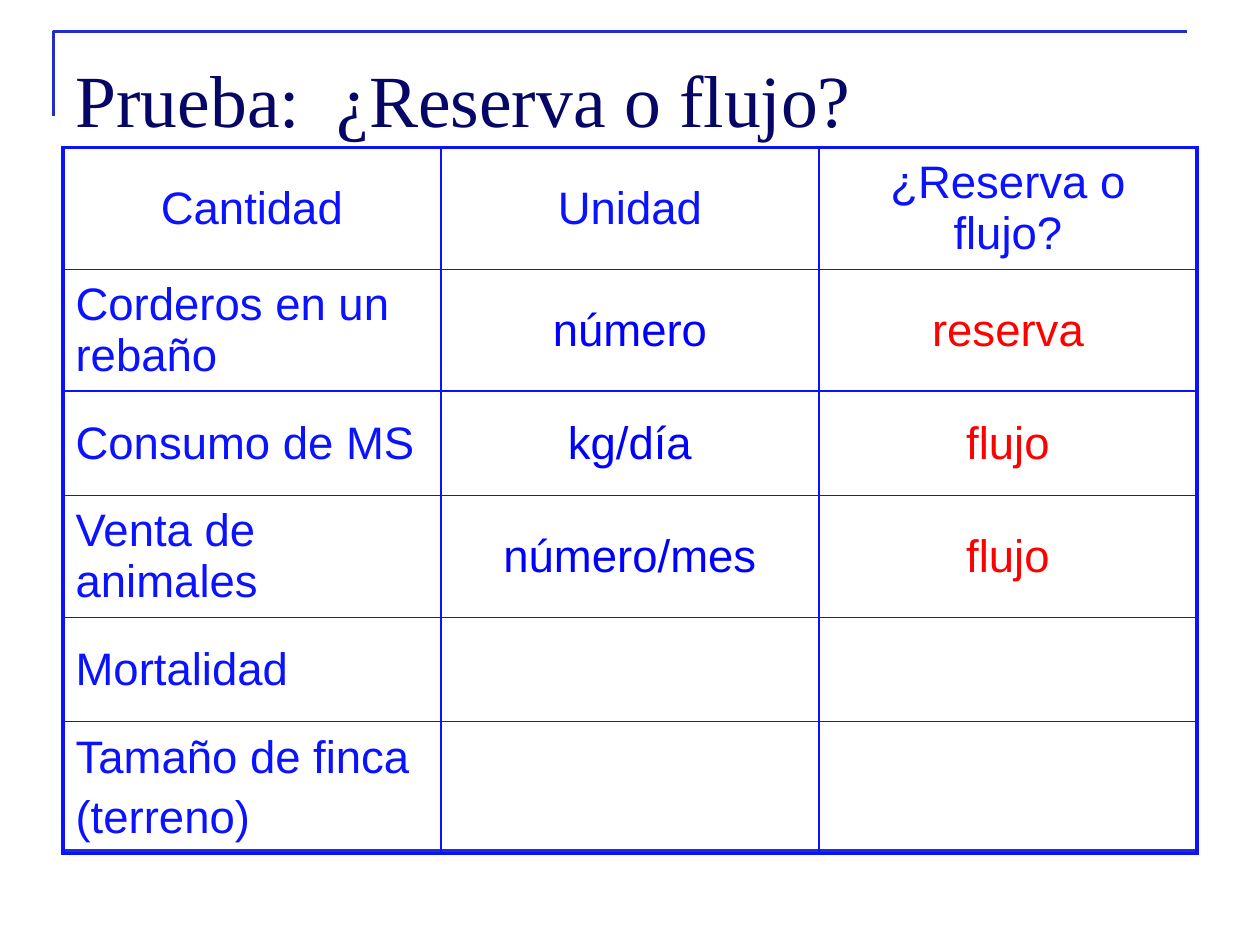
from lxml.etree import SubElement
from pptx import Presentation
from pptx.dml.color import RGBColor
from pptx.enum.shapes import MSO_CONNECTOR
from pptx.enum.text import MSO_ANCHOR, MSO_AUTO_SIZE, PP_ALIGN
from pptx.oxml.ns import qn
from pptx.util import Pt

TITLE = "Prueba:  ¿Reserva o flujo?"
ROWS = [
    ("Cantidad", "Unidad", "¿Reserva o flujo?"),
    ("Corderos en un rebaño", "número", "reserva"),
    ("Consumo de MS", "kg/día", "flujo"),
    ("Venta de animales", "número/mes", "flujo"),
    ("Mortalidad", "", ""),
    ("Tamaño de finca\n(terreno)", "", ""),
]
HEIGHTS = [69.7, 69.7, 59.5, 69.7, 59.5, 75.5]
COL_W = 216
LEFT, TOP = 36, 84.2
THICK, THIN = 2.25, 1

NAVY = RGBColor(0x06, 0x06, 0x66)
RULE = RGBColor(0x20, 0x2E, 0xCC)
BLUE = RGBColor(0x0A, 0x12, 0xFF)
UNIT_BLUE = RGBColor(0x00, 0x00, 0xFF)
RED = RGBColor(0xFF, 0x00, 0x00)
BODY_COLORS = [BLUE, UNIT_BLUE, RED]


def style_line(shape):
    shape.line.color.rgb = RULE
    shape.line.width = Pt(1.5)


def set_border(cell, side, width):
    ln = SubElement(cell._tc.get_or_add_tcPr(), qn(f"a:ln{side}"), w=str(Pt(width)))
    fill = SubElement(ln, qn("a:solidFill"))
    SubElement(fill, qn("a:srgbClr"), val=str(BLUE))


def fill_cell(cell, text, row, col):
    edges = {"L": col == 0, "R": col == len(ROWS[0]) - 1,
             "T": row == 0, "B": row == len(ROWS) - 1}
    for side, outer in edges.items():
        set_border(cell, side, THICK if outer else THIN)
    cell.fill.background()
    cell.vertical_anchor = MSO_ANCHOR.MIDDLE
    cell.text_frame.text = text
    for p in cell.text_frame.paragraphs:
        p.alignment = PP_ALIGN.LEFT if row and col == 0 else PP_ALIGN.CENTER
        p.space_before = Pt(5.2)
        for r in p.runs:
            r.font.name = "Arial"
            r.font.size = Pt(26)
            r.font.color.rgb = BODY_COLORS[col] if row else BLUE


prs = Presentation()
prs.slide_width, prs.slide_height = Pt(720), Pt(540)
s = prs.slides.add_slide(prs.slide_layouts[5])

fb = s.shapes.build_freeform(Pt(30.5), Pt(66.2))
fb.add_line_segments([(Pt(30.5), Pt(18)), (Pt(678.5), Pt(18))], close=False)
corner = fb.convert_to_shape()
corner.fill.background()
corner.shadow.inherit = False
style_line(corner)

rule = s.shapes.add_connector(MSO_CONNECTOR.STRAIGHT, Pt(36), Pt(486), Pt(684), Pt(486))
style_line(rule)
SubElement(rule._element.spPr, qn("a:effectLst"))

title = s.shapes.title
title.left, title.top, title.width, title.height = Pt(36), Pt(21.6), Pt(648), Pt(90)
tf = title.text_frame
tf.text = TITLE
tf.word_wrap = True
tf.auto_size = MSO_AUTO_SIZE.NONE
tf.vertical_anchor = MSO_ANCHOR.TOP
tf.margin_top = Pt(9)
p = tf.paragraphs[0]
p.alignment = PP_ALIGN.LEFT
font = p.runs[0].font
font.name = "Times New Roman"
font.size = Pt(42)
font.color.rgb = NAVY

cols = len(ROWS[0])
table = s.shapes.add_table(len(ROWS), cols, Pt(LEFT), Pt(TOP),
                           Pt(COL_W * cols), Pt(sum(HEIGHTS))).table
table.first_row = False
table.horz_banding = False
for column in table.columns:
    column.width = Pt(COL_W)
for i, (texts, height) in enumerate(zip(ROWS, HEIGHTS)):
    table.rows[i].height = Pt(height)
    for j, text in enumerate(texts):
        fill_cell(table.cell(i, j), text, i, j)

prs.save("out.pptx")
